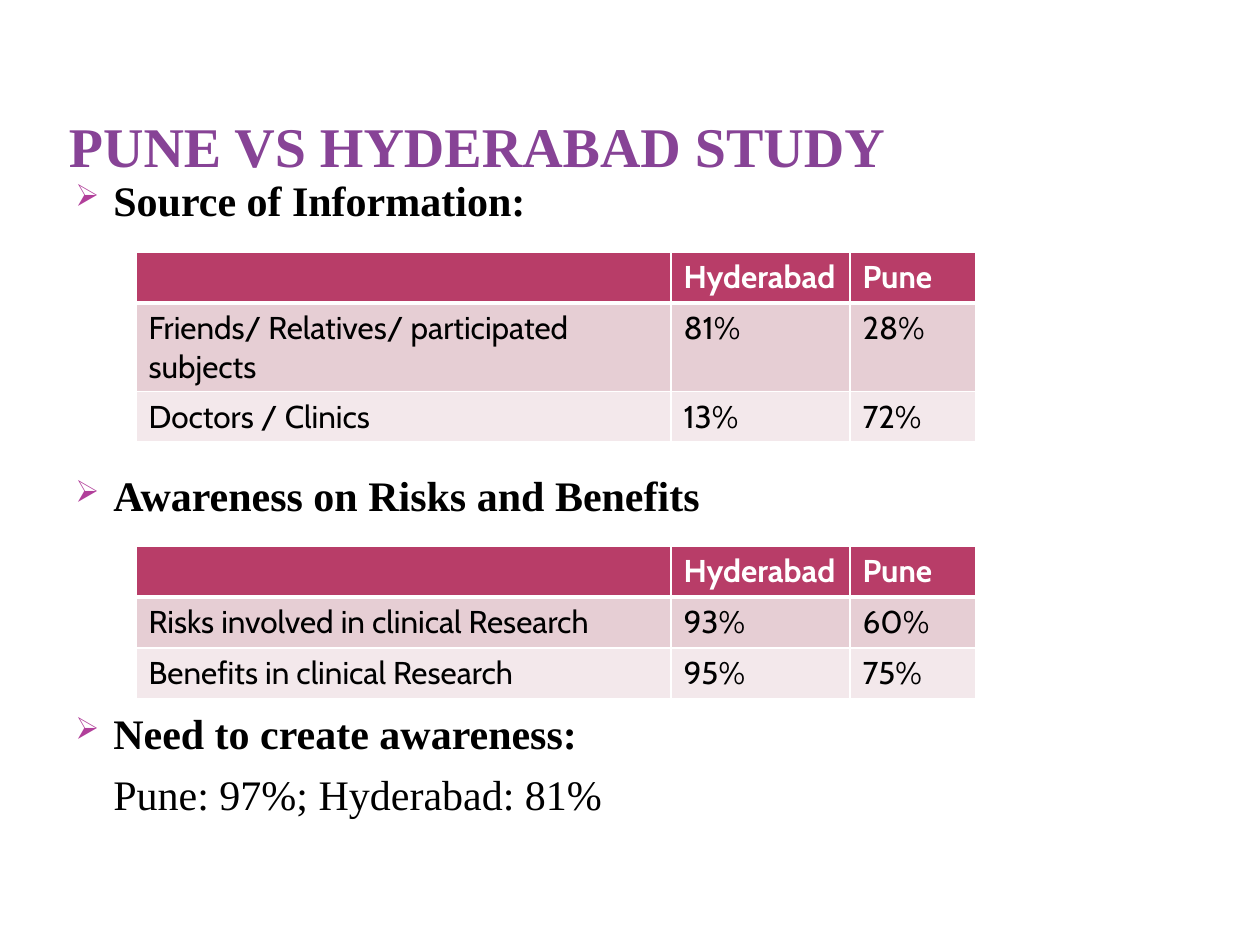
from lxml.etree import SubElement
from pptx import Presentation
from pptx.dml.color import RGBColor
from pptx.enum.text import MSO_ANCHOR
from pptx.oxml.ns import qn
from pptx.util import Emu, Pt

PX = 914400 // 126
COLUMN_WIDTHS = (535, 179, 126)
ROW_HEIGHT = 51
CITIES = ("", "Hyderabad", "Pune")
SOURCES = (
    CITIES,
    ("Friends/ Relatives/ participated subjects", "81%", "28%"),
    ("Doctors / Clinics", "13%", "72%"),
)
AWARENESS = (
    CITIES,
    ("Risks involved in clinical Research", "93%", "60%"),
    ("Benefits in clinical Research", "95%", "75%"),
)
FINDINGS = (
    ("Source of Information:", True, 0),
    ("Awareness on Risks and Benefits", True, 140),
    ("Need to create awareness:", True, 107),
    ("Pune: 97%; Hyderabad: 81%", False, 6),
)


def px(*lengths):
    """Turn px lengths into EMU."""
    return [Emu(length * PX) for length in lengths]


def color(value):
    """Turn a hex string into a colour."""
    return RGBColor.from_string(value)


def style(font, name, size, value, bold):
    """Set the face, size, colour and weight of a font."""
    font.name, font.size, font.bold = name, Pt(size), bold
    font.color.rgb = color(value)


def add_title(slide, box):
    """Place the slide title at the bottom of its box."""
    frame = slide.shapes.add_textbox(*px(*box)).text_frame
    frame.word_wrap = True
    frame.vertical_anchor = MSO_ANCHOR.BOTTOM
    frame.margin_left, frame.margin_right = px(6, 6)
    frame.margin_top = frame.margin_bottom = 0
    frame.text = "PUNE VS HYDERABAD STUDY"
    style(frame.paragraphs[0].runs[0].font, "Times New Roman", 32, "874396", True)


def add_bullet(properties):
    """Give a paragraph an arrow bullet."""
    bullet_color = SubElement(properties, qn("a:buClr"))
    SubElement(bullet_color, qn("a:srgbClr"), val="B13F9A")
    SubElement(properties, qn("a:buSzPct"), val="73000")
    SubElement(properties, qn("a:buChar"), char="➢")


def add_findings(slide, box):
    """Place the headings, spaced to leave room for the tables."""
    frame = slide.shapes.add_textbox(*px(*box)).text_frame
    frame.word_wrap = True
    frame.text = "\n".join(text for text, _, _ in FINDINGS)
    indent = 38 * PX
    for paragraph, (_, heading, space) in zip(frame.paragraphs, FINDINGS):
        paragraph.space_before = Pt(space)
        properties = paragraph._p.get_or_add_pPr()
        properties.set("marL", str(indent))
        properties.set("indent", str(-indent if heading else 0))
        if heading:
            add_bullet(properties)
        style(paragraph.runs[0].font, "Times New Roman", 24, "000000", heading)


def add_borders(cell, bottom):
    """Draw white cell borders, with a bottom one of the given points."""
    properties = cell._tc.get_or_add_tcPr()
    for side, width in (("L", 1), ("R", 1), ("T", 1), ("B", bottom)):
        line = SubElement(properties, qn(f"a:ln{side}"), w=str(Pt(width)))
        fill = SubElement(line, qn("a:solidFill"))
        SubElement(fill, qn("a:srgbClr"), val="FFFFFF")


def add_city_table(slide, left, top, rows):
    """Place a table that compares the two cities."""
    size = (sum(COLUMN_WIDTHS), ROW_HEIGHT * len(rows))
    table = slide.shapes.add_table(
        len(rows), len(CITIES), *px(left, top, *size)
    ).table
    for column, width in zip(table.columns, px(*COLUMN_WIDTHS)):
        column.width = width
    fills = ("B83D68", "E6CED4", "F3E8EB")
    for r, (values, fill) in enumerate(zip(rows, fills)):
        header = r == 0
        for c, value in enumerate(values):
            cell = table.cell(r, c)
            add_borders(cell, 3 if header else 1)
            if r == 1:
                top_line = cell._tc.tcPr.find(qn("a:lnT"))
                top_line.set("w", str(Pt(3)))
            cell.fill.solid()
            cell.fill.fore_color.rgb = color(fill)
            cell.text = value
            paragraph = cell.text_frame.paragraphs[0]
            font = paragraph.runs[0].font if value else paragraph.font
            style(font, "Cabin", 18, "FFFFFF" if header else "000000", header)


def main():
    """Build the slide and save it."""
    deck = Presentation()
    deck.slide_width, deck.slide_height = px(1260, 945)
    slide = deck.slides.add_slide(deck.slide_layouts[6])
    add_title(slide, (63, 38, 1134, 141))
    add_findings(slide, (63, 168, 1134, 677))
    add_city_table(slide, 136, 252, SOURCES)
    add_city_table(slide, 136, 546, AWARENESS)
    deck.save("out.pptx")


if __name__ == "__main__":
    main()
